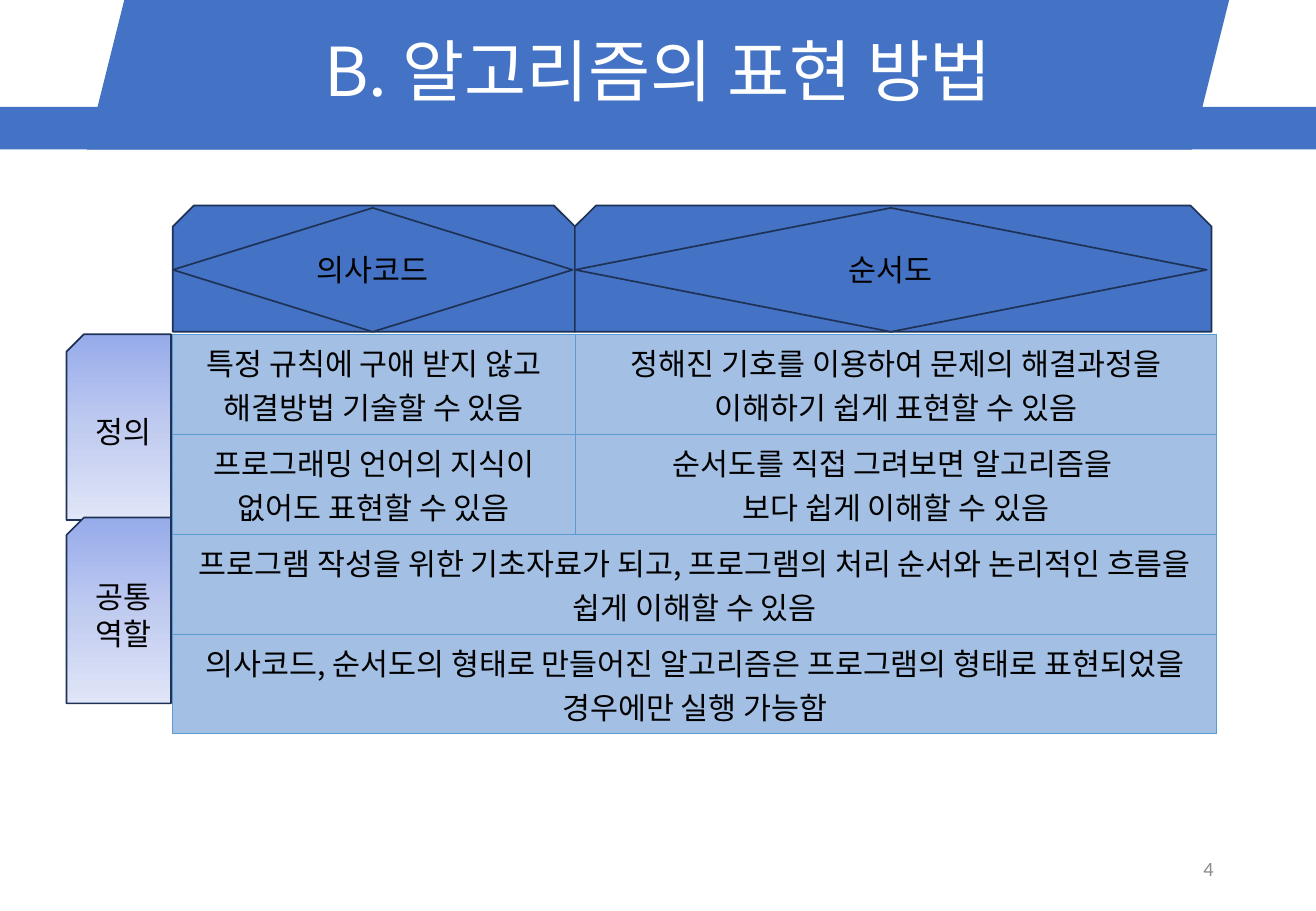
from copy import deepcopy
from dataclasses import dataclass

from pptx import Presentation
from pptx import util as u
from pptx.dml.color import RGBColor
from pptx.enum import shapes, text
from pptx.oxml import parse_xml
from pptx.oxml.ns import nsdecls, qn

COLOURS = {
    "blue": "4472C4", "outline": "1E3256", "cell": "A3C0E4", "border": "5B9BD5",
    "white": "FFFFFF", "black": "000000", "grey": "8C8C8C",
    "tab_top": "96ABEA", "tab_middle": "C0CBF0", "tab_bottom": "E0E5F7",
}
KOREAN = "Noto Sans CJK KR"
KIND = shapes.MSO_SHAPE
ALIGN = text.PP_ALIGN

TABLE_LEFT, TABLE_TOP, ROW_HEIGHT = 13.13, 36.69, 10.97
COLUMN_WIDTHS = (30.56, 48.78)
TAB_PITCH = 20.13


@dataclass(frozen=True)
class Area:
    left: float
    top: float
    width: float
    height: float


@dataclass(frozen=True)
class Header:
    label: str
    left: float
    width: float
    diamond_width: float


@dataclass(frozen=True)
class TextStyle:
    size: float = 18
    colour: str = "black"
    font: str = KOREAN
    align: ALIGN = ALIGN.CENTER
    spacing: float | None = None


BANDS = (
    (KIND.RECTANGLE, Area(0, 11.75, 100, 4.67)),
    (KIND.PARALLELOGRAM, Area(6.6, 0, 86.8, 16.42)),
)
HEADERS = (
    Header("의사코드", TABLE_LEFT, COLUMN_WIDTHS[0], 30.38),
    Header("순서도", TABLE_LEFT + COLUMN_WIDTHS[0], 48.38, 48.01),
)
ROW_LABELS = ("정의", "공통\v역할")
ROWS = (
    ("특정 규칙에 구애 받지 않고 해결방법 기술할 수 있음",
     "정해진 기호를 이용하여 문제의 해결과정을 이해하기 쉽게 표현할 수 있음"),
    ("프로그래밍 언어의 지식이 없어도 표현할 수 있음",
     "순서도를 직접 그려보면 알고리즘을 \n보다 쉽게 이해할 수 있음"),
    ("프로그램 작성을 위한 기초자료가 되고, 프로그램의 처리 순서와 논리적인 흐름을 쉽게 이해할 수 있음",),
    ("의사코드, 순서도의 형태로 만들어진 알고리즘은 프로그램의 형태로 표현되었을 경우에만 실행 가능함",),
)

deck = Presentation()
deck.slide_width, deck.slide_height = u.Inches(10.83), u.Inches(7.5)
slide = deck.slides.add_slide(deck.slide_layouts[6])


def rgb(name: str) -> RGBColor:
    return RGBColor.from_string(COLOURS[name])


def across(share: float) -> int:
    return round(deck.slide_width * share / 100)


def down(share: float) -> int:
    return round(deck.slide_height * share / 100)


def place(area: Area) -> tuple[int, int, int, int]:
    return across(area.left), down(area.top), across(area.width), down(area.height)


def write(frame, words: str, style: TextStyle) -> None:
    frame.text = words
    frame.word_wrap = True
    for paragraph in frame.paragraphs:
        paragraph.alignment = style.align
        if style.spacing:
            paragraph.line_spacing = style.spacing
        font = paragraph.font
        font.size, font.name = u.Pt(style.size), style.font
        font.color.rgb = rgb(style.colour)
        defaults = paragraph._p.pPr.find(qn("a:defRPr"))
        defaults.set("kern", "0")
        defaults.append(parse_xml(f'<a:ea {nsdecls("a")} typeface="{style.font}"/>'))


def add_text(area: Area, words: str, style: TextStyle) -> None:
    frame = slide.shapes.add_textbox(*place(area)).text_frame
    write(frame, words, style)
    frame.vertical_anchor = text.MSO_ANCHOR.MIDDLE


def add_block(kind: KIND, area: Area, outlined: bool = True):
    block = slide.shapes.add_shape(kind, *place(area))
    block.shadow.inherit = False
    block.fill.solid()
    block.fill.fore_color.rgb = rgb("blue")
    if outlined:
        block.line.color.rgb = rgb("outline")
        block.line.width = u.Pt(1)
    else:
        block.line.fill.background()
    return block


def add_header(header: Header) -> None:
    add_block(KIND.SNIP_2_SAME_RECTANGLE,
              Area(header.left, 22.56, header.width, 13.87))
    diamond = add_block(KIND.DIAMOND,
                        Area(header.left, 22.82, header.diamond_width, 13.6))
    write(diamond.text_frame, header.label, TextStyle())


def add_row_label(index: int, label: str) -> None:
    tab = add_block(KIND.SNIP_1_RECTANGLE,
                    Area(5.06, TABLE_TOP + index * TAB_PITCH, 7.94, 20.4))
    tab._element.spPr.xfrm.set("flipH", "1")
    tab.fill.gradient()
    tab.fill.gradient_angle = 270
    stop_list = next(tab._element.spPr.iter(qn("a:gsLst")))
    stop_list.append(deepcopy(stop_list[0]))
    shades = ("tab_top", "tab_middle", "tab_bottom")
    for position, (stop, shade) in enumerate(zip(tab.fill.gradient_stops, shades)):
        stop.position = position / 2
        stop.color.rgb = rgb(shade)
    write(tab.text_frame, label, TextStyle())


def style_cell(cell) -> None:
    cell.fill.solid()
    cell.fill.fore_color.rgb = rgb("cell")
    cell.vertical_anchor = text.MSO_ANCHOR.MIDDLE
    properties = cell._tc.get_or_add_tcPr()
    for index, side in enumerate("LRTB"):
        properties.insert(index, parse_xml(
            f'<a:ln{side} {nsdecls("a")} w="{u.Pt(0.5)}"><a:solidFill>'
            f'<a:srgbClr val="{COLOURS["border"]}"/></a:solidFill></a:ln{side}>'))


def add_comparison() -> None:
    area = Area(TABLE_LEFT, TABLE_TOP, sum(COLUMN_WIDTHS), ROW_HEIGHT * len(ROWS))
    table = slide.shapes.add_table(len(ROWS), len(COLUMN_WIDTHS), *place(area)).table
    table.first_row = table.horz_banding = False
    for column, width in zip(table.columns, COLUMN_WIDTHS):
        column.width = across(width)
    for cell in table.iter_cells():
        style_cell(cell)
    for row, entries in enumerate(ROWS):
        if len(entries) == 1:
            table.cell(row, 0).merge(table.cell(row, 1))
        for column, entry in enumerate(entries):
            write(table.cell(row, column).text_frame, entry, TextStyle())


def main() -> None:
    for kind, area in BANDS:
        add_block(kind, area, outlined=False)
    add_text(Area(0, 0, 100, 16.4), "B. 알고리즘의 표현 방법",
             TextStyle(size=40, colour="white", spacing=0.9))
    add_comparison()
    add_text(Area(70.6, 92.67, 22.53, 5.33), "4",
             TextStyle(size=12, colour="grey", font="Calibri", align=ALIGN.RIGHT))
    for index, label in enumerate(ROW_LABELS):
        add_row_label(index, label)
    for header in HEADERS:
        add_header(header)
    deck.save("out.pptx")


if __name__ == "__main__":
    main()
